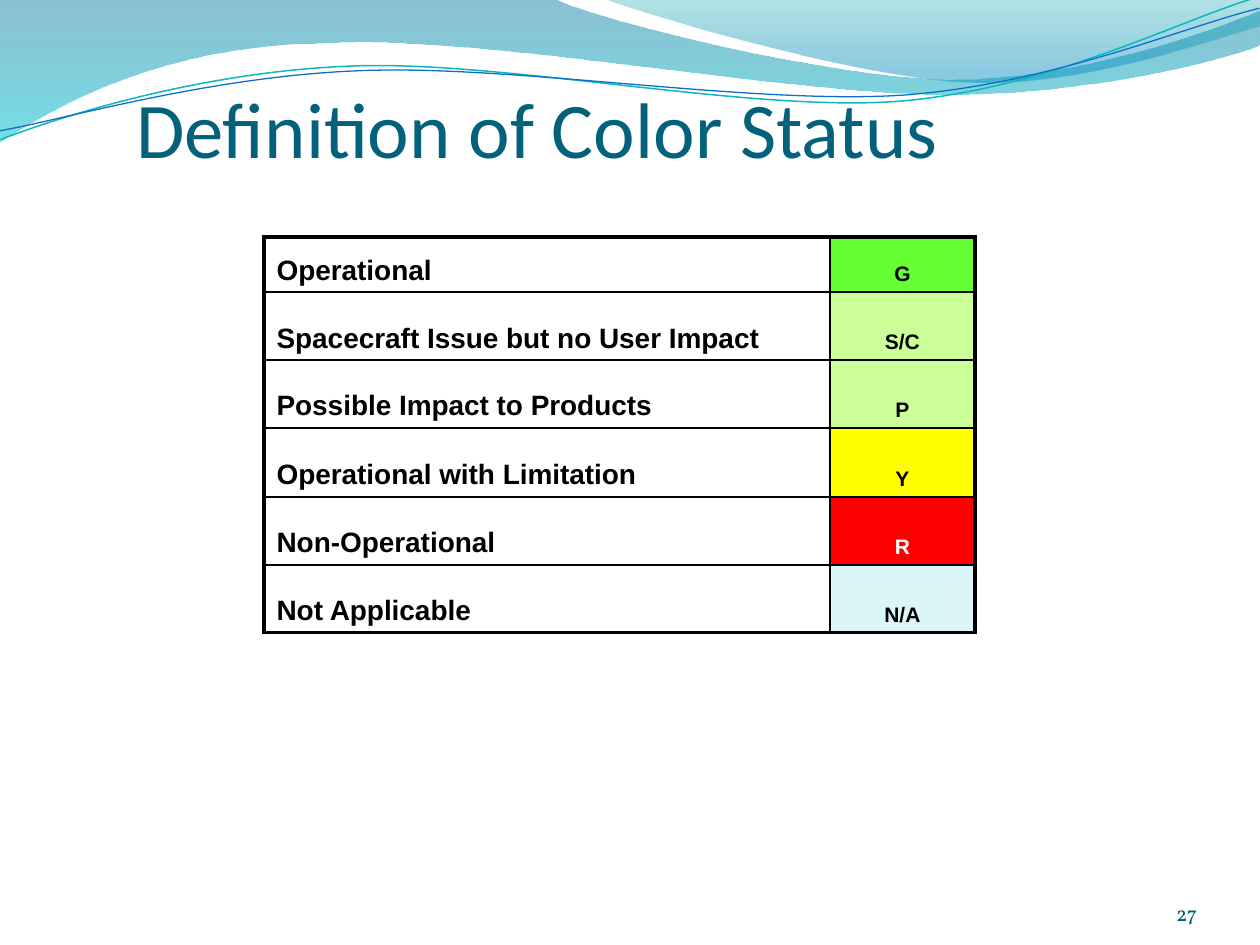
from dataclasses import dataclass

from lxml import etree
from pptx import Presentation
from pptx.dml.color import RGBColor
from pptx.enum.text import MSO_ANCHOR, PP_ALIGN
from pptx.oxml.ns import qn
from pptx.util import Emu, Pt

LEFT, CENTER, RIGHT = PP_ALIGN.LEFT, PP_ALIGN.CENTER, PP_ALIGN.RIGHT
BOTTOM = MSO_ANCHOR.BOTTOM
EMU_PER_PX = 914400 / 126
BLACK, WHITE = "000000", "FFFFFF"
OUTER_PT, INNER_PT = 2.25, 1

Point = tuple[int, int]


@dataclass
class GradientStop:
    position: float
    color: str
    opacity: int


@dataclass
class Wave:
    """Segments hold one point for a line or three for a Bezier curve."""
    start: Point
    segments: list[list[Point]]
    stops: tuple[GradientStop, ...] = ()
    line_color: str = ""
    line_pt: float = 0
    rotation: float = 0


@dataclass
class Status:
    meaning: str
    code: str
    fill: str
    code_color: str = BLACK


WAVES = [
    Wave((0, 0), [[(554, -1)],
                  [(600, 21), (837, 79), (955, 79)],
                  [(1075, 79), (1207, 33), (1260, 11)],
                  [(1261, 45)],
                  [(1239, 55), (1096, 96), (940, 94)],
                  [(784, 94), (481, 35), (324, 43)],
                  [(163, 45), (58, 105), (-1, 142)],
                  [(0, 0)]],
         stops=(GradientStop(0, "0074A1", 45), GradientStop(1, "00C6CF", 55))),
    Wave((604, -1), [[(641, 14), (859, 78), (969, 82)],
                     [(1079, 87), (1211, 40), (1260, 26)],
                     [(1260, 0)],
                     [(604, -1)]],
         stops=(GradientStop(0, "00A1A9", 30), GradientStop(0.8, "008BBF", 45))),
    Wave((-2, 110), [[(58, 90), (199, 52), (349, 53)],
                     [(499, 53), (745, 118), (896, 114)],
                     [(1049, 109), (1184, 45), (1260, 27)]],
         line_color="0AB8BF", line_pt=0.85, rotation=357.3),
    Wave((-2, 101), [[(57, 94), (207, 57), (357, 58)],
                     [(509, 58), (750, 111), (902, 108)],
                     [(1052, 104), (1188, 52), (1262, 38)]],
         line_color="0F6FC6", line_pt=0.75, rotation=357.3),
]

STATUSES = [
    Status("Operational", "G", "66FF33"),
    Status("Spacecraft Issue but no User Impact", "S/C", "CCFF99"),
    Status("Possible Impact to Products", "P", "CCFF99"),
    Status("Operational with Limitation", "Y", "FFFF00"),
    Status("Non-Operational", "R", "FF0000", WHITE),
    Status("Not Applicable", "N/A", "DBF5F9"),
]
COLUMN_WIDTHS = (566, 145)
TABLE_HEIGHT, FIRST_ROW_HEIGHT = 396, 55


def px(length: int) -> Emu:
    return Emu(round(length * EMU_PER_PX))


def rgb(color: str) -> RGBColor:
    return RGBColor.from_string(color)


def write_text(frame, text: str, *, size: float, font: str, color: str,
               bold: bool = False, align=LEFT, line_spacing: float = 1,
               space_before: float = 0) -> None:
    paragraph = frame.paragraphs[0]
    paragraph.alignment = align
    paragraph.line_spacing = line_spacing
    paragraph.space_before = Pt(space_before)
    run = paragraph.add_run()
    run.text = text
    run.font.size, run.font.name, run.font.bold = Pt(size), font, bold
    run.font.color.rgb = rgb(color)


def add_label(slide, text: str, left: int, top: int, width: int, height: int,
              inset_top: int = 0, **text_format) -> None:
    frame = slide.shapes.add_textbox(px(left), px(top), px(width), px(height)).text_frame
    frame.word_wrap = True
    frame.vertical_anchor = BOTTOM
    frame.margin_left = frame.margin_right = frame.margin_bottom = 0
    frame.margin_top = px(inset_top)
    write_text(frame, text, **text_format)


def bend_segments(shape, segments: list[list[Point]]) -> None:
    """Turn each run of three line steps that stands for a curve into a Bezier."""
    steps = iter(list(shape._element.spPr.iter(qn("a:lnTo"))))
    for segment in segments:
        group = [next(steps) for _ in segment]
        if len(group) == 3:
            curve = etree.Element(qn("a:cubicBezTo"))
            group[0].addprevious(curve)
            for step in group:
                curve.append(step[0])
                step.getparent().remove(step)


def fill_gradient(shape, stops: tuple[GradientStop, ...]) -> None:
    shape.fill.gradient()
    shape.fill.gradient_angle = 270
    for target, stop in zip(shape.fill.gradient_stops, stops):
        target.position = stop.position
        target.color.rgb = rgb(stop.color)
    for color, stop in zip(shape._element.spPr.iter(qn("a:srgbClr")), stops):
        etree.SubElement(color, qn("a:alpha"), val=str(stop.opacity * 1000))


def add_wave(slide, wave: Wave) -> None:
    builder = slide.shapes.build_freeform(*wave.start, scale=EMU_PER_PX)
    for segment in wave.segments:
        builder.add_line_segments(segment, close=False)
    if wave.stops:
        builder.add_line_segments([], close=True)
    shape = builder.convert_to_shape()
    bend_segments(shape, wave.segments)
    shape.rotation = wave.rotation
    shape.shadow.inherit = False
    if wave.stops:
        fill_gradient(shape, wave.stops)
        shape.line.fill.background()
    else:
        shape.fill.background()
        shape.line.color.rgb = rgb(wave.line_color)
        shape.line.width = Pt(wave.line_pt)


def set_borders(cell, widths: dict[str, float]) -> None:
    properties = cell._tc.get_or_add_tcPr()
    for index, (side, width) in enumerate(widths.items()):
        border = etree.Element(qn(f"a:ln{side}"), w=str(Pt(width)))
        fill = etree.SubElement(border, qn("a:solidFill"))
        etree.SubElement(fill, qn("a:srgbClr"), val=BLACK)
        properties.insert(index, border)


def add_status_table(slide, left: int, top: int) -> None:
    last = len(STATUSES) - 1
    pitch = (TABLE_HEIGHT - FIRST_ROW_HEIGHT) / last
    edges = [0] + [FIRST_ROW_HEIGHT + round(pitch * row) for row in range(last + 1)]
    table = slide.shapes.add_table(len(STATUSES), 2, px(left), px(top),
                                   px(sum(COLUMN_WIDTHS)), px(TABLE_HEIGHT)).table
    table.first_row = table.horz_banding = False
    for column, width in zip(table.columns, COLUMN_WIDTHS):
        column.width = px(width)
    for row, status in enumerate(STATUSES):
        table.rows[row].height = px(edges[row + 1] - edges[row])
        meaning, code = table.cell(row, 0), table.cell(row, 1)
        meaning.fill.background()
        code.fill.solid()
        code.fill.fore_color.rgb = rgb(status.fill)
        for cell, text, size, color, align in (
                (meaning, status.meaning, 16, BLACK, LEFT),
                (code, status.code, 12, status.code_color, CENTER)):
            cell.vertical_anchor = BOTTOM
            write_text(cell.text_frame, text, size=size, font="Arial", color=color,
                       bold=True, align=align, line_spacing=0.9,
                       space_before=0.15 * size)
            set_borders(cell, {"L": OUTER_PT if cell is meaning else INNER_PT,
                               "R": OUTER_PT if cell is code else INNER_PT,
                               "T": OUTER_PT if row == 0 else INNER_PT,
                               "B": OUTER_PT if row == last else INNER_PT})


def main() -> None:
    presentation = Presentation()
    presentation.slide_width, presentation.slide_height = px(1260), px(945)
    slide = presentation.slides.add_slide(presentation.slide_layouts[6])
    for wave in WAVES:
        add_wave(slide, wave)
    add_label(slide, "27", 1092, 876, 105, 50,
              size=12, font="Vollkorn", color="045D75", align=RIGHT)
    add_label(slide, "Definition of Color Status", 136, 69, 989, 105, inset_top=6,
              size=45, font="Calibri", color="04617B")
    add_status_table(slide, 264, 237)
    presentation.save("out.pptx")


if __name__ == "__main__":
    main()
